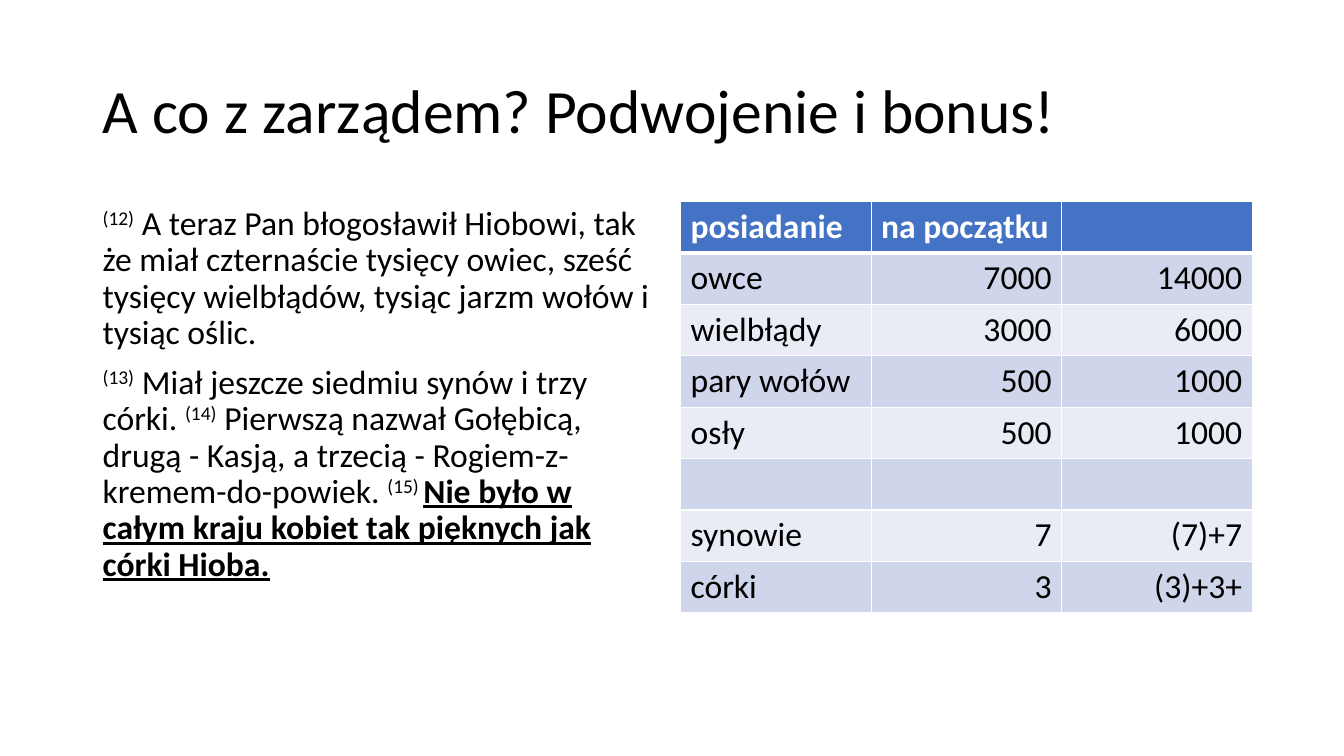
from dataclasses import dataclass

from lxml import etree
from pptx import Presentation
from pptx.dml.color import RGBColor
from pptx.enum.text import MSO_ANCHOR, MSO_AUTO_SIZE, PP_ALIGN
from pptx.oxml.ns import qn
from pptx.util import Inches, Pt

LEFT, RIGHT = PP_ALIGN.LEFT, PP_ALIGN.RIGHT
MIDDLE, TOP = MSO_ANCHOR.MIDDLE, MSO_ANCHOR.TOP
NO_FIT = MSO_AUTO_SIZE.NONE
TITLE_ONLY = 5


@dataclass(frozen=True)
class Theme:
    font: str = "Calibri"
    title_size: int = 44
    text_size: int = 24
    text: str = "000000"
    light: str = "FFFFFF"
    header: str = "4472C4"
    bands: tuple = ("CFD5EA", "E9EBF5")
    thin_border: int = 1
    header_border: int = 3


TITLE = "A co z zarządem? Podwojenie i bonus!"
VERSES = [
    [
        ("(12)", "verse"),
        (" A teraz Pan błogosławił Hiobowi, tak że miał czternaście tysięcy owiec, "
         "sześć tysięcy wielbłądów, tysiąc jarzm wołów i tysiąc oślic.", "plain"),
    ],
    [
        ("(13)", "verse"),
        (" Miał jeszcze siedmiu synów i trzy córki. ", "plain"),
        ("(14)", "verse"),
        (" Pierwszą nazwał Gołębicą, drugą - Kasją, a trzecią - "
         "Rogiem-z-kremem-do-powiek. ", "plain"),
        ("(15) ", "verse"),
        ("Nie było w całym kraju kobiet tak pięknych jak córki Hioba.", "strong"),
    ],
]
POSSESSIONS = [
    ("posiadanie", "na początku", ""),
    ("owce", "7000", "14000"),
    ("wielbłądy", "3000", "6000"),
    ("pary wołów", "500", "1000"),
    ("osły", "500", "1000"),
    ("", "", ""),
    ("synowie", "7", "(7)+7"),
    ("córki", "3", "(3)+3+"),
]


def apply_format(target, values):
    for name, value in values.items():
        setattr(target, name, value)


class SlideBuilder:
    def __init__(self, presentation, theme):
        self.theme = theme
        self.slide = presentation.slides.add_slide(presentation.slide_layouts[TITLE_ONLY])

    def add_run(self, paragraph, text, color, size, **extra):
        run = paragraph.add_run()
        run.text = text
        apply_format(run.font, {"name": self.theme.font, "size": Pt(size), **extra})
        run.font.color.rgb = RGBColor.from_string(color)
        return run

    def title(self, text, left, top, width, height):
        shape = self.slide.shapes.title
        apply_format(shape, {"left": Inches(left), "top": Inches(top),
                             "width": Inches(width), "height": Inches(height)})
        apply_format(shape.text_frame, {"word_wrap": True, "auto_size": NO_FIT,
                                        "vertical_anchor": MIDDLE})
        paragraph = shape.text_frame.paragraphs[0]
        apply_format(paragraph, {"alignment": LEFT, "line_spacing": 0.9})
        self.add_run(paragraph, text, self.theme.text, self.theme.title_size)

    def body(self, verses, left, top, width, height):
        shape = self.slide.shapes.add_textbox(
            Inches(left), Inches(top), Inches(width), Inches(height))
        frame = shape.text_frame
        apply_format(frame, {"word_wrap": True, "auto_size": NO_FIT, "vertical_anchor": TOP})
        for index, verse in enumerate(verses):
            paragraph = frame.add_paragraph() if index else frame.paragraphs[0]
            apply_format(paragraph, {"line_spacing": 0.9, "space_before": Pt(10)})
            for text, style in verse:
                strong = style == "strong"
                run = self.add_run(paragraph, text, self.theme.text, self.theme.text_size,
                                   bold=strong, underline=strong)
                if style == "verse":
                    run.font._element.set("baseline", "30000")

    def borders(self, cell, widths):
        properties = cell._tc.get_or_add_tcPr()
        for side, width in widths.items():
            line = etree.SubElement(properties, qn(f"a:ln{side}"), w=str(Pt(width)))
            fill = etree.SubElement(line, qn("a:solidFill"))
            etree.SubElement(fill, qn("a:srgbClr"), val=self.theme.light)

    def table(self, rows, left, top, column_width, row_height):
        theme = self.theme
        columns = len(rows[0])
        table = self.slide.shapes.add_table(
            len(rows), columns, Inches(left), Inches(top),
            Inches(column_width * columns), Inches(row_height * len(rows))).table
        for column in table.columns:
            column.width = Inches(column_width)
        for row_index, row in enumerate(rows):
            table.rows[row_index].height = Inches(row_height)
            is_header = row_index == 0
            color = theme.light if is_header else theme.text
            fill = theme.header if is_header else theme.bands[(row_index - 1) % 2]
            widths = dict.fromkeys("LRTB", theme.thin_border)
            if row_index < 2:
                widths["B" if is_header else "T"] = theme.header_border
            for column_index, text in enumerate(row):
                cell = table.cell(row_index, column_index)
                self.borders(cell, widths)
                cell.fill.solid()
                cell.fill.fore_color.rgb = RGBColor.from_string(fill)
                if text:
                    paragraph = cell.text_frame.paragraphs[0]
                    paragraph.alignment = RIGHT if column_index and not is_header else LEFT
                    self.add_run(paragraph, text, color, theme.text_size, bold=is_header)


def main():
    presentation = Presentation()
    apply_format(presentation, {"slide_width": Inches(13.33), "slide_height": Inches(7.5)})
    builder = SlideBuilder(presentation, Theme())
    builder.title(TITLE, 0.92, 0.4, 11.5, 1.45)
    builder.body(VERSES, 0.92, 2, 5.67, 4.76)
    builder.table(POSSESSIONS, 6.75, 2, 1.89, 0.51)
    presentation.save("out.pptx")


if __name__ == "__main__":
    main()
